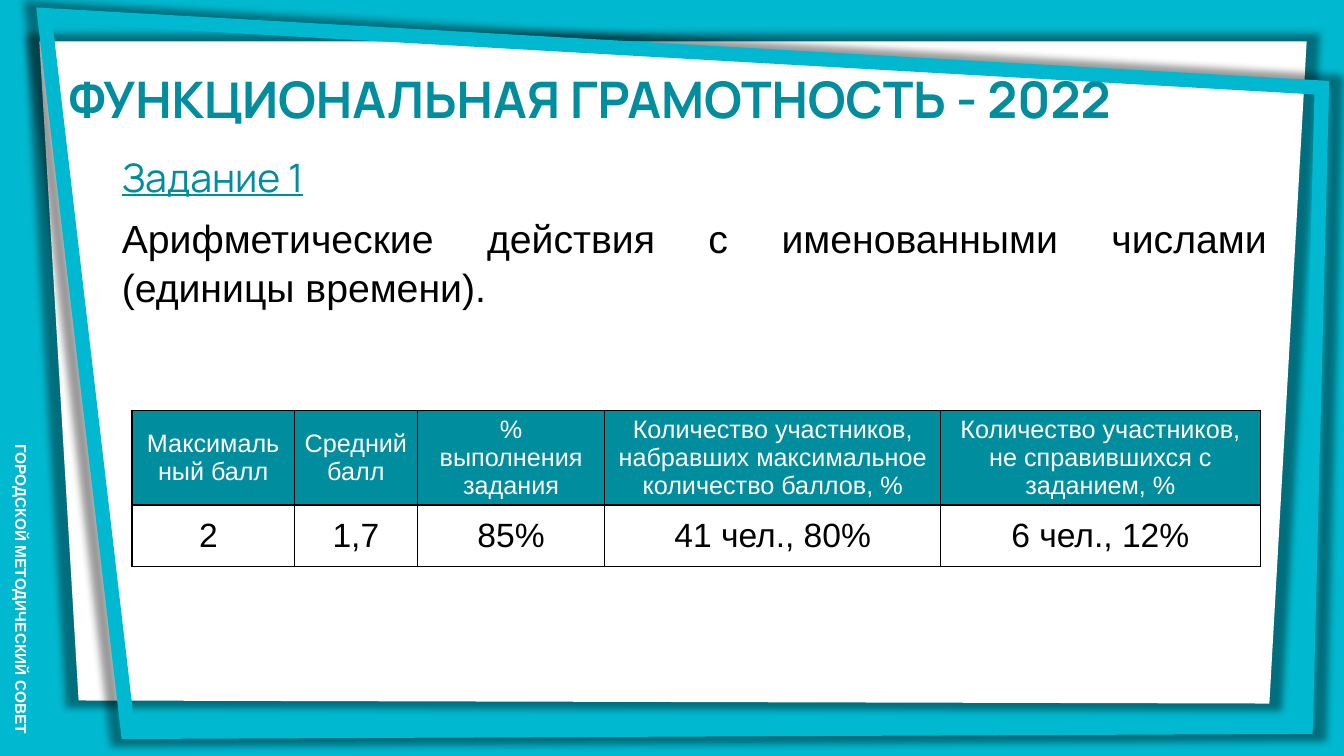
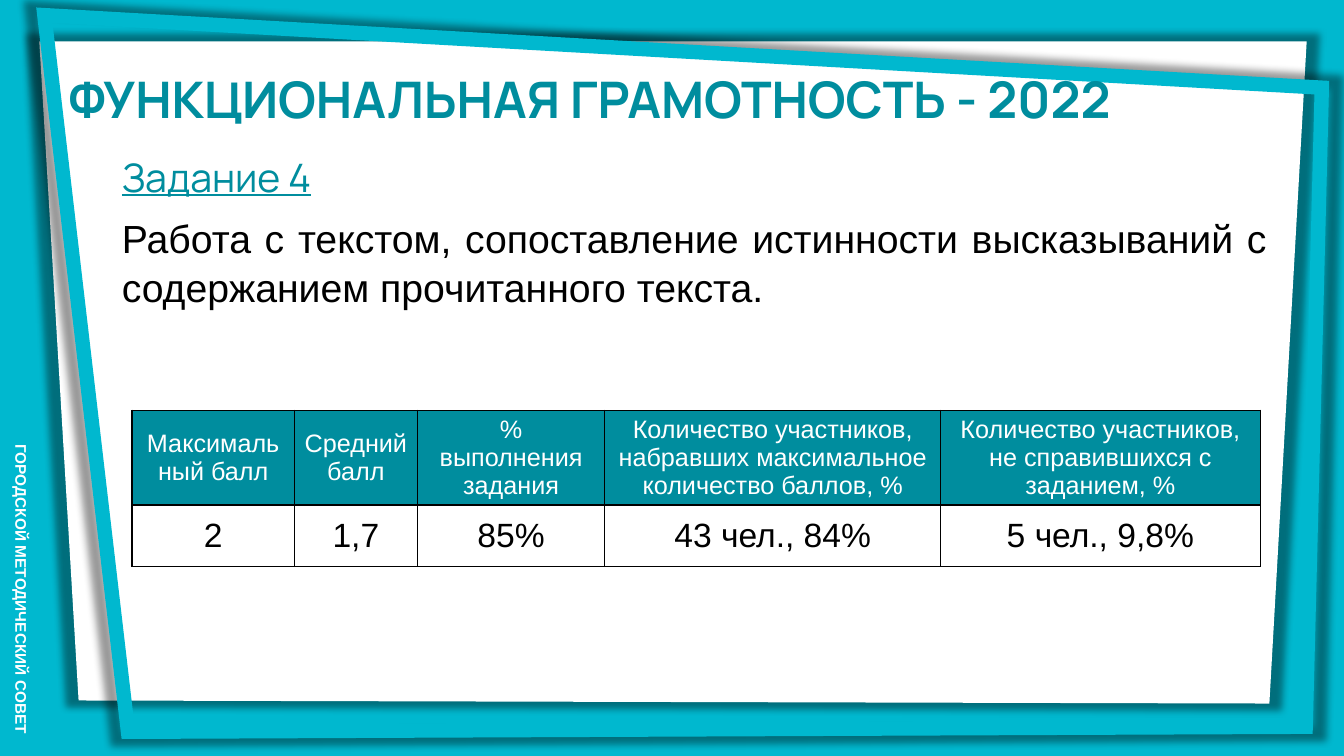
from dataclasses import dataclass

import lxml.etree
import pptx
import pptx.dml.color
import pptx.enum.text
import pptx.oxml
import pptx.oxml.ns
import pptx.util

EMU_PER_PX = 9144
COLORS = {
    "background": "00B8CF",
    "accent": "008D9E",
    "paper": "FFFFFF",
    "ink": "000000",
}
ALIGN = pptx.enum.text.PP_ALIGN
ANCHOR = pptx.enum.text.MSO_ANCHOR
DRAWING_NS = pptx.oxml.ns.nsdecls("a")

HEADING = "ФУНКЦИОНАЛЬНАЯ ГРАМОТНОСТЬ - 2022"
COUNCIL = "ГОРОДСКОЙ МЕТОДИЧЕСКИЙ СОВЕТ"
COLUMN_WIDTHS = (161, 122, 186, 333, 317)
ROW_HEIGHTS = (94, 61)
COLUMN_HEADERS = (
    "Максимальный балл",
    "Средний балл",
    "% выполнения задания",
    "Количество участников, набравших максимальное количество баллов, %",
    "Количество участников, не справившихся с заданием, %",
)


@dataclass(frozen=True)
class Box:
    left: int
    top: int
    width: int
    height: int

    def emu(self) -> tuple[int, ...]:
        return tuple(map(px, (self.left, self.top, self.width, self.height)))


@dataclass(frozen=True)
class TextStyle:
    size: int
    color: str
    font: str = "Arial"
    bold: bool = False
    underline: bool = False
    align: ALIGN = ALIGN.LEFT
    spacing: float = 1.0


@dataclass(frozen=True)
class Task:
    name: str
    skill: str
    results: tuple[str, ...]


HEADING_STYLE = TextStyle(36, "accent", "Manrope", bold=True)
NAME_STYLE = TextStyle(28, "accent", "Manrope", underline=True)
SKILL_STYLE = TextStyle(28, "ink", align=ALIGN.JUSTIFY, spacing=1.04)
COUNCIL_STYLE = TextStyle(11, "paper", bold=True, align=ALIGN.CENTER)
HEADER_STYLE = TextStyle(18, "paper", align=ALIGN.CENTER)
RESULT_STYLE = TextStyle(24, "ink", align=ALIGN.CENTER)

TASKS = (
    Task(
        "Задание 1",
        "Арифметические действия с именованными числами (единицы времени).",
        ("2 ", "1,7", "85%", "41 чел., 80%", "6 чел., 12%"),
    ),
    Task(
        "Задание 4",
        "Работа с текстом, сопоставление истинности высказываний "
        "с содержанием прочитанного текста.",
        ("2", "1,7", "85%", "43 чел., 84%", "5 чел., 9,8%"),
    ),
)


def px(length: int) -> int:
    return pptx.util.Emu(length * EMU_PER_PX)


def rgb(color: str) -> pptx.dml.color.RGBColor:
    return pptx.dml.color.RGBColor.from_string(COLORS[color])


def write(frame, text: str, style: TextStyle) -> None:
    paragraph = frame.paragraphs[0]
    paragraph.alignment = style.align
    paragraph.line_spacing = style.spacing
    run = paragraph.add_run()
    run.text = text
    run.font.name = style.font
    run.font.size = pptx.util.Pt(style.size)
    run.font.bold = style.bold
    run.font.underline = style.underline
    run.font.color.rgb = rgb(style.color)


def set_frame(frame, inset: int = 5) -> None:
    frame.word_wrap = True
    frame.auto_size = pptx.enum.text.MSO_AUTO_SIZE.NONE
    frame.vertical_anchor = ANCHOR.TOP
    frame.margin_left = frame.margin_right = px(10)
    frame.margin_top = frame.margin_bottom = px(inset)


def add_text(slide, box: Box, text: str, style: TextStyle, inset: int = 5):
    label = slide.shapes.add_textbox(*box.emu())
    set_frame(label.text_frame, inset)
    write(label.text_frame, text, style)
    return label


def add_outline(slide, corners: tuple[tuple[int, int], ...]):
    start, *others = corners
    builder = slide.shapes.build_freeform(*start, scale=EMU_PER_PX)
    builder.add_line_segments(others, close=True)
    outline = builder.convert_to_shape()
    outline.line.fill.background()
    outline.fill.background()
    return outline


def add_glow(outline) -> None:
    outline._element.spPr.append(pptx.oxml.parse_xml(
        f'<a:effectLst {DRAWING_NS}><a:outerShdw blurRad="63500" sx="102000" '
        f'sy="102000" algn="ctr" rotWithShape="0"><a:srgbClr val="{COLORS["ink"]}">'
        '<a:alpha val="40000"/></a:srgbClr></a:outerShdw></a:effectLst>'
    ))


def add_backdrop(slide, layout) -> None:
    council = add_text(slide, Box(-145, 564, 330, 41), COUNCIL, COUNCIL_STYLE, 10)
    council.rotation = 90

    paper = add_outline(slide, ((39, 41), (1296, 41), (1259, 698), (78, 695)))
    paper.fill.solid()
    paper.fill.fore_color.rgb = rgb("paper")
    add_glow(paper)

    border = add_outline(slide, ((44, 15), (127, 726), (1295, 721), (1311, 87)))
    border.line.color.rgb = rgb("background")
    border.line.width = pptx.util.Pt(10.25)
    miter = lxml.etree.SubElement(border.line._ln, pptx.oxml.ns.qn("a:miter"))
    miter.set("lim", "800000")
    add_glow(border)

    for part in (council, paper, border):
        layout.shapes._spTree.append(part._element)


def set_borders(cell) -> None:
    properties = cell._tc.get_or_add_tcPr()
    for side in "LRTB":
        properties.append(pptx.oxml.parse_xml(
            f'<a:ln{side} {DRAWING_NS} w="12700"><a:solidFill>'
            f'<a:srgbClr val="{COLORS["ink"]}"/></a:solidFill></a:ln{side}>'
        ))


def add_results(slide, results: tuple[str, ...]) -> None:
    box = Box(131, 407, sum(COLUMN_WIDTHS), sum(ROW_HEIGHTS))
    table = slide.shapes.add_table(
        len(ROW_HEIGHTS), len(COLUMN_WIDTHS), *box.emu()
    ).table
    table.first_row = table.horz_banding = False
    for column, width in zip(table.columns, COLUMN_WIDTHS):
        column.width = px(width)
    rows = (
        (COLUMN_HEADERS, HEADER_STYLE, "accent"),
        (results, RESULT_STYLE, "paper"),
    )
    for row, height, (texts, style, fill) in zip(table.rows, ROW_HEIGHTS, rows):
        row.height = px(height)
        for cell, text in zip(row.cells, texts):
            set_borders(cell)
            cell.fill.solid()
            cell.fill.fore_color.rgb = rgb(fill)
            cell.vertical_anchor = ANCHOR.MIDDLE
            cell.margin_left = cell.margin_right = px(10)
            cell.margin_top = cell.margin_bottom = px(5)
            write(cell.text_frame, text, style)


def add_task(slide, task: Task) -> None:
    heading = slide.shapes.title
    heading.left, heading.top, heading.width, heading.height = Box(
        58, 63, 1101, 71
    ).emu()
    set_frame(heading.text_frame)
    write(heading.text_frame, HEADING, HEADING_STYLE)
    add_results(slide, task.results)
    add_text(slide, Box(111, 147, 287, 71), task.name, NAME_STYLE)
    add_text(slide, Box(111, 206, 1155, 71), task.skill, SKILL_STYLE)


def main() -> None:
    deck = pptx.Presentation()
    deck.slide_width, deck.slide_height = px(1333), px(750)
    background = deck.slide_master.background.fill
    background.solid()
    background.fore_color.rgb = rgb("background")

    layout = deck.slide_layouts.get_by_name("Title Only")
    slides = [deck.slides.add_slide(layout) for _ in TASKS]
    add_backdrop(slides[0], layout)
    for slide, task in zip(slides, TASKS):
        add_task(slide, task)
    deck.save("out.pptx")


if __name__ == "__main__":
    main()
